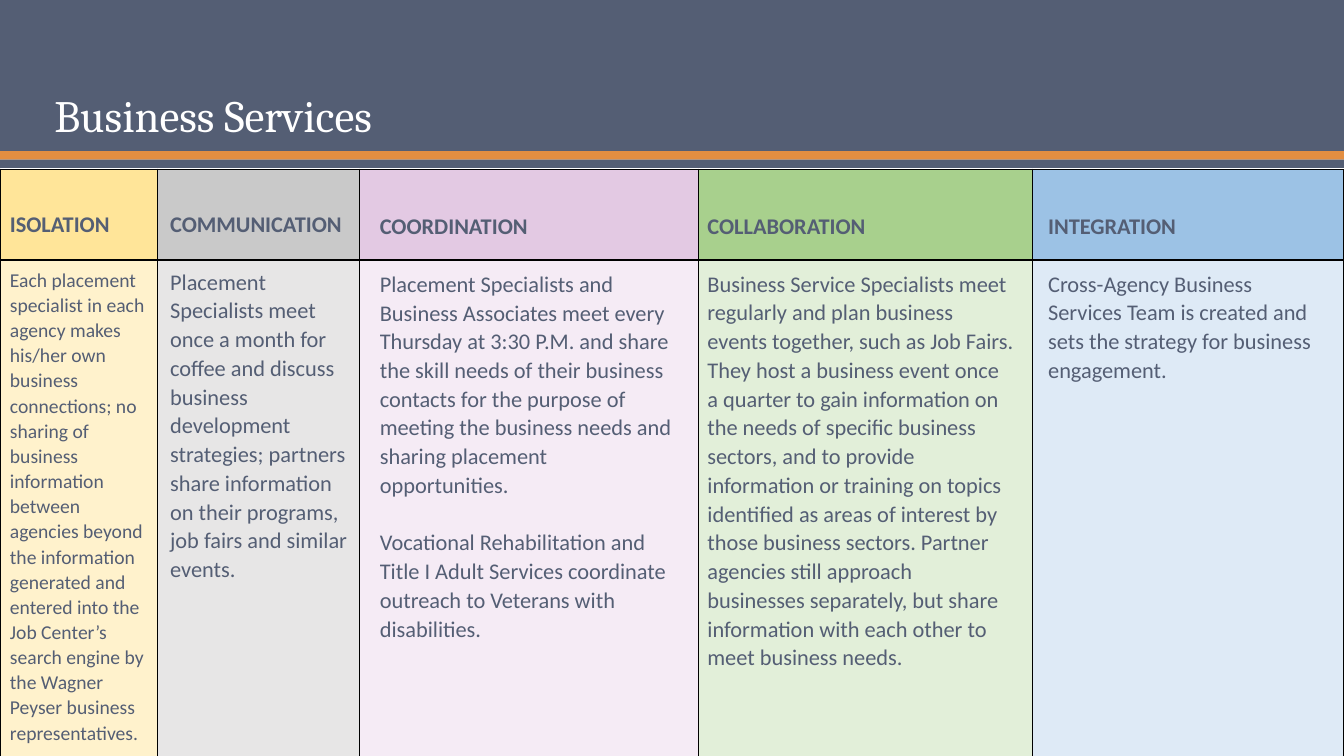
from dataclasses import dataclass
from itertools import product

from lxml.etree import SubElement
from pptx import Presentation
from pptx.dml.color import RGBColor as Rgb
from pptx.enum.shapes import MSO_SHAPE as Shape
from pptx.enum.text import MSO_ANCHOR as Anchor
from pptx.oxml.ns import qn
from pptx.util import Pt


@dataclass(frozen=True)
class Theme:
    """Colours, fonts and type sizes of the slide."""
    slate: str = "545E74"
    orange: str = "E38E41"
    white: str = "FFFFFF"
    border: str = "000000"
    heading_font: str = "Cambria"
    body_font: str = "Calibri"
    title_size: float = 32
    text_size: float = 16
    small_size: float = 14
    line_spacing: float = 1.07
    paragraph_gap: float = 20.5


class SlideBuilder:
    """Draws each kind of element on the current slide in one style."""

    def __init__(self, slide, theme):
        self.shapes = slide.shapes
        self.theme = theme

    def band(self, top, height, color):
        """Draw a full-width band."""
        band = self.shapes.add_shape(Shape.RECTANGLE, 0, Pt(top), Pt(WIDTH), Pt(height))
        band.shadow.inherit = False
        band.fill.solid()
        band.fill.fore_color.rgb = Rgb.from_string(color)
        band.line.fill.background()

    def text(self, left, top, width, height, paragraphs, anchor=Anchor.TOP):
        """Add a text box from pairs of text and format values."""
        box = self.shapes.add_textbox(Pt(left), Pt(top), Pt(width), Pt(height))
        frame = box.text_frame
        frame.word_wrap = True
        frame.vertical_anchor = anchor
        for index, (content, formats) in enumerate(paragraphs):
            paragraph = frame.add_paragraph() if index else frame.paragraphs[0]
            paragraph.text = content
            paragraph.space_before = Pt(self.theme.paragraph_gap if index else 0)
            paragraph.line_spacing = formats["line_spacing"]
            for name, value in formats["font"].items():
                setattr(paragraph.font, name, value)
            paragraph.font.color.rgb = Rgb.from_string(formats["color"])

    def title(self, content):
        """Add the slide title."""
        font = {"name": self.theme.heading_font, "size": Pt(self.theme.title_size)}
        formats = {"font": font, "color": self.theme.white, "line_spacing": 0.9}
        self.text(31.68, 23.76, 826.56, 81.36, [(content, formats)], Anchor.BOTTOM)

    def stage(self, left, top, width, height, heading, size, descriptions):
        """Add a stage heading with its descriptions."""
        def formats(points, bold):
            font = {"name": self.theme.body_font, "size": Pt(points), "bold": bold}
            return {"font": font, "color": self.theme.slate,
                    "line_spacing": self.theme.line_spacing}

        paragraphs = [(heading, formats(self.theme.text_size, True))]
        paragraphs += [(item, formats(size, False)) for item in descriptions]
        self.text(left, top, width, height, paragraphs)

    def grid(self, top, widths, heights, fills):
        """Add a bordered table of coloured cells."""
        table = self.shapes.add_table(len(heights), len(widths), 0, Pt(top),
                                      Pt(sum(widths)), Pt(sum(heights))).table
        table.horz_banding = False
        for column, width in zip(table.columns, widths):
            column.width = Pt(width)
        for row, height in zip(table.rows, heights):
            row.height = Pt(height)
        for row, column in product(range(len(heights)), range(len(widths))):
            cell = table.cell(row, column)
            self.border(cell)
            cell.fill.solid()
            cell.fill.fore_color.rgb = Rgb.from_string(fills[row][column])

    def border(self, cell):
        """Outline a table cell."""
        properties = cell._tc.get_or_add_tcPr()
        for side in "LRTB":
            line = SubElement(properties, qn(f"a:ln{side}"), w=str(Pt(1)))
            SubElement(SubElement(line, qn("a:solidFill")), qn("a:srgbClr"),
                       val=self.theme.border)


WIDTH, HEIGHT = 960, 540
THEME = Theme()
COLUMN_WIDTHS = [112.32, 144.72, 241.92, 238.32, 222.72]
ROW_HEIGHTS = [64.8, 355.68]
STAGE_FILLS = [
    ["FFE599", "C9C9C9", "E3C9E3", "A8D08D", "9CC2E5"],
    ["FFF2CC", "E7E6E6", "F5EBF5", "E2EFD9", "DEEAF6"],
]
STAGES = [
    (0, 145.44, 114.48, 310.32, "ISOLATION", THEME.small_size, [
        "Each placement specialist in each agency makes his/her own business "
        "connections; no sharing of business information between agencies beyond "
        "the information generated and entered into the Job Center’s search engine "
        "by the Wagner Peyser business representatives."]),
    (114.48, 145.44, 141.12, 310.32, "COMMUNICATION", THEME.text_size, [
        "Placement Specialists meet once a month for coffee and discuss business "
        "development strategies; partners share information on their programs, job "
        "fairs and similar events."]),
    (264.24, 146.88, 226.08, 310.32, "COORDINATION", THEME.text_size, [
        "Placement Specialists and Business Associates meet every Thursday at "
        "3:30 P.M. and share the skill needs of their business contacts for the "
        "purpose of meeting the business needs and sharing placement opportunities.",
        "Vocational Rehabilitation and Title I Adult Services coordinate outreach "
        "to Veterans with disabilities."]),
    (498.24, 146.88, 233.28, 367.2, "COLLABORATION", THEME.text_size, [
        "Business Service Specialists meet regularly and plan business events "
        "together, such as Job Fairs. They host a business event once a quarter to "
        "gain information on the needs of specific business sectors, and to provide "
        "information or training on topics identified as areas of interest by those "
        "business sectors. Partner agencies still approach businesses separately, "
        "but share information with each other to meet business needs."]),
    (741.6, 146.88, 209.52, 367.2, "INTEGRATION", THEME.text_size, [
        "Cross-Agency Business Services Team is created and sets the strategy for "
        "business engagement."]),
]


def main():
    """Build and save the slide."""
    deck = Presentation()
    deck.slide_width, deck.slide_height = Pt(WIDTH), Pt(HEIGHT)
    builder = SlideBuilder(deck.slides.add_slide(deck.slide_layouts[6]), THEME)
    builder.band(0, 108, THEME.slate)
    builder.band(108, 6, THEME.orange)
    builder.band(114, 6, THEME.slate)
    builder.title("Business Services")
    builder.grid(120.96, COLUMN_WIDTHS, ROW_HEIGHTS, STAGE_FILLS)
    for stage in STAGES:
        builder.stage(*stage)
    deck.save("out.pptx")


if __name__ == "__main__":
    main()
